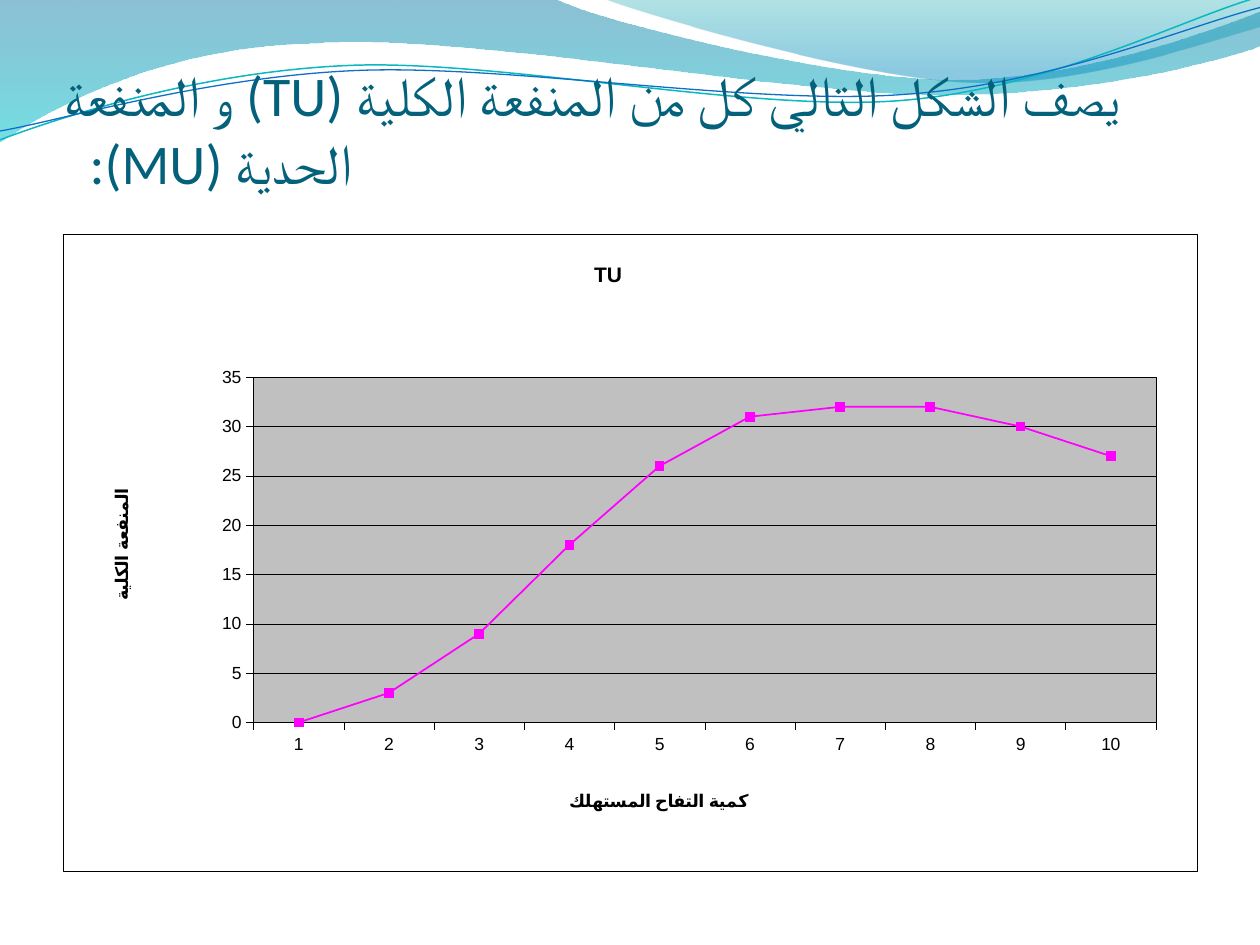
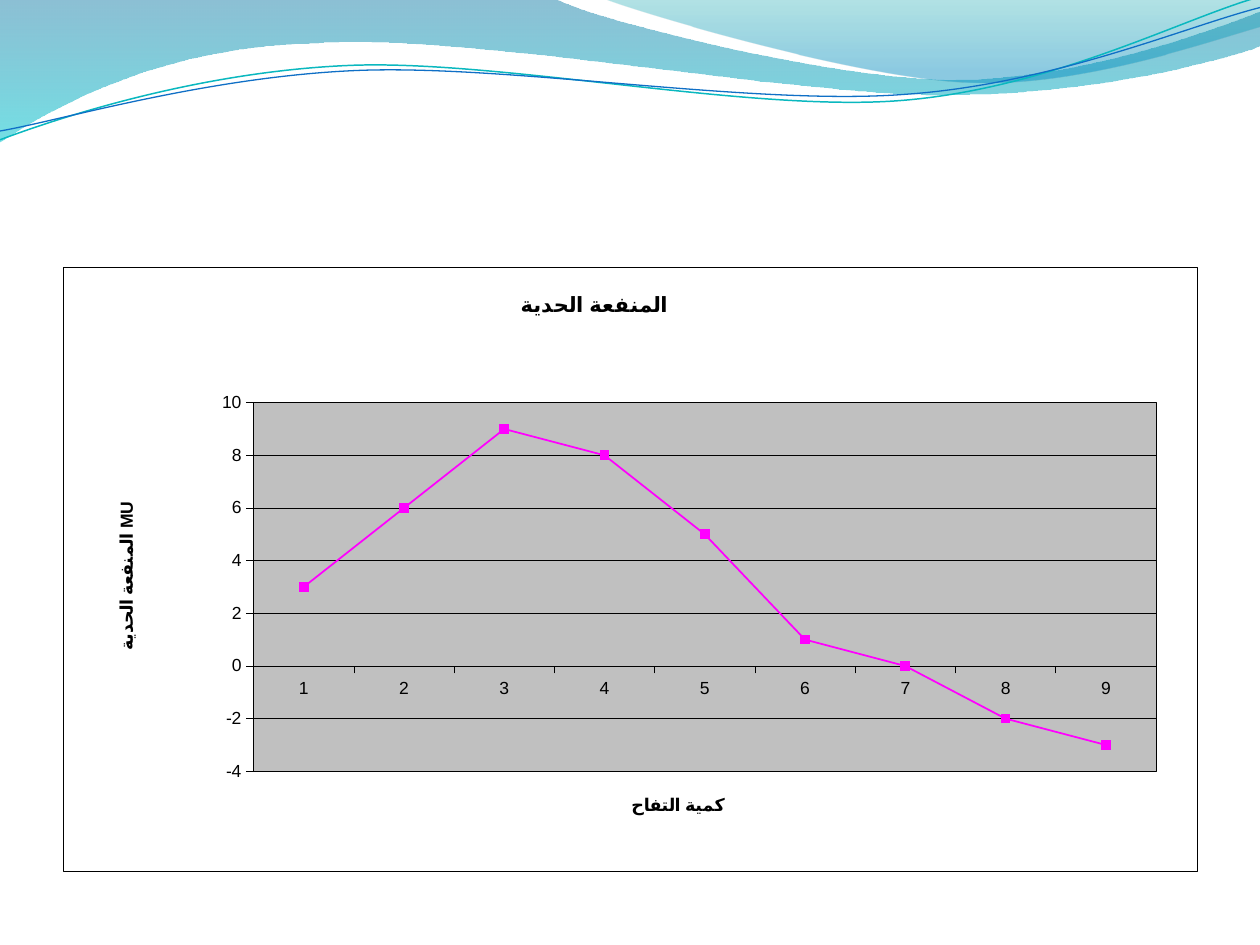
from lxml import etree
from pptx import Presentation
from pptx.chart.data import CategoryChartData
from pptx.dml.color import RGBColor
from pptx.enum.chart import XL_CHART_TYPE, XL_MARKER_STYLE, XL_TICK_MARK
from pptx.enum.text import MSO_ANCHOR, PP_ALIGN
from pptx.oxml import parse_xml
from pptx.oxml.ns import nsdecls, qn
from pptx.util import Inches, Pt

BLACK = RGBColor(0x00, 0x00, 0x00)
TITLE_TEAL = RGBColor(0x04, 0x61, 0x7B)
MAGENTA = RGBColor(0xFF, 0x00, 0xFF)
WHITE = RGBColor(0xFF, 0xFF, 0xFF)
PLOT_GREY = RGBColor(0xC0, 0xC0, 0xC0)
WAVE_BLUE = RGBColor(0x00, 0x74, 0xA1)
WAVE_AQUA = RGBColor(0x00, 0xC6, 0xCF)
CREST_TEAL = RGBColor(0x00, 0xA1, 0xA9)
CREST_BLUE = RGBColor(0x00, 0x8B, 0xBF)
LINE_AQUA = RGBColor(0x0A, 0xB8, 0xBF)
LINE_BLUE = RGBColor(0x0F, 0x6F, 0xC6)

TITLE_FONT = "Calibri"
CHART_FONT = "Arial"
CHART_LEFT, CHART_WIDTH, CHART_BOTTOM = 0.5, 9, 6.92
PLOT_LEFT, PLOT_TOP, PLOT_WIDTH = 0.168, 0.224, 0.796

WAVE = [
    (0, 0), (4.4, -0.01),
    (4.76, 0.17, 6.64, 0.63, 7.58, 0.63), (8.53, 0.63, 9.58, 0.26, 10, 0.09),
    (10.01, 0.36),
    (9.83, 0.44, 8.7, 0.76, 7.46, 0.75), (6.22, 0.75, 3.82, 0.28, 2.57, 0.34),
    (1.29, 0.36, 0.46, 0.83, -0.01, 1.13),
]
CREST = [
    (4.79, -0.01),
    (5.09, 0.11, 6.82, 0.62, 7.69, 0.65), (8.56, 0.69, 9.61, 0.32, 10, 0.21),
    (10, 0),
]
AQUA_CURVE = [
    (0, 1.11), (0.48, 0.93, 1.58, 0.57, 2.77, 0.52),
    (3.95, 0.47, 5.93, 0.89, 7.13, 0.8), (8.33, 0.71, 9.38, 0.15, 9.98, -0.02),
]
BLUE_CURVE = [
    (0, 1.04), (0.47, 0.96, 1.64, 0.61, 2.83, 0.56),
    (4.03, 0.51, 5.97, 0.84, 7.17, 0.75), (8.36, 0.67, 9.41, 0.21, 10, 0.06),
]


def bend_segments(shape, segments):
    lines = iter(list(shape._element.iter(qn("a:lnTo"))))
    for segment in segments:
        line = next(lines)
        if len(segment) == 6:
            line.tag = qn("a:cubicBezTo")
            for _ in range(2):
                control_line = next(lines)
                line.append(control_line[0])
                control_line.getparent().remove(control_line)


def add_outline(slide, outline, closed):
    points = [(Inches(segment[i]), Inches(segment[i + 1]))
              for segment in outline for i in range(0, len(segment), 2)]
    builder = slide.shapes.build_freeform(*points[0], scale=1.0)
    builder.add_line_segments(points[1:], close=closed)
    shape = builder.convert_to_shape()
    bend_segments(shape, outline[1:])
    shape.shadow.inherit = False
    return shape


def add_band(slide, outline, stops):
    shape = add_outline(slide, outline, True)
    shape.line.fill.background()
    shape.fill.gradient()
    shape.fill.gradient_angle = 270
    for gradient_stop, (position, color, _) in zip(shape.fill.gradient_stops, stops):
        gradient_stop.position = position
        gradient_stop.color.rgb = color
    colors = shape._element.spPr.iter(qn("a:srgbClr"))
    for color_element, (_, _, opacity) in zip(colors, stops):
        alpha = etree.SubElement(color_element, qn("a:alpha"))
        alpha.set("val", str(opacity * 1000))


def add_curve(slide, outline, color, width):
    shape = add_outline(slide, outline, False)
    shape.fill.background()
    shape.line.color.rgb = color
    shape.line.width = Pt(width)


def add_wave_header(slide):
    add_band(slide, WAVE, [(0, WAVE_BLUE, 45), (1, WAVE_AQUA, 55)])
    add_band(slide, CREST, [(0, CREST_TEAL, 30), (0.8, CREST_BLUE, 45)])
    add_curve(slide, AQUA_CURVE, LINE_AQUA, 0.85)
    add_curve(slide, BLUE_CURVE, LINE_BLUE, 0.75)


def add_title(slide, text):
    box = slide.shapes.add_textbox(Inches(0.51), Inches(0.92), Inches(9), Inches(0.63))
    frame = box.text_frame
    frame.word_wrap = True
    frame.vertical_anchor = MSO_ANCHOR.BOTTOM
    frame.margin_left = frame.margin_right = frame.margin_bottom = 0
    frame.margin_top = Inches(0.05)
    paragraph = frame.paragraphs[0]
    paragraph.alignment = PP_ALIGN.LEFT
    paragraph._p.get_or_add_pPr().set("rtl", "1")
    run = paragraph.add_run()
    run.text = text
    run.font.name = TITLE_FONT
    run.font.size = Pt(32)
    run.font.color.rgb = TITLE_TEAL
    complex_script = etree.SubElement(run._r.get_or_add_rPr(), qn("a:cs"))
    complex_script.set("typeface", TITLE_FONT)


def set_layout(element, inner=False, **fractions):
    for existing in element.findall(qn("c:layout")):
        element.remove(existing)
    layout = etree.Element(qn("c:layout"))
    manual = etree.SubElement(layout, qn("c:manualLayout"))
    settings = [("layoutTarget", "inner")] if inner else []
    settings += [("xMode", "edge"), ("yMode", "edge"), *fractions.items()]
    for name, value in settings:
        etree.SubElement(manual, qn(f"c:{name}")).set("val", str(value))
    text = element.find(qn("c:tx"))
    if text is None:
        element.insert(0, layout)
    else:
        text.addnext(layout)


def area_format(color):
    return parse_xml(
        f'<c:spPr {nsdecls("c", "a")}><a:solidFill><a:srgbClr val="{color}"/></a:solidFill>'
        f'<a:ln w="{Pt(0.25)}"><a:solidFill><a:srgbClr val="{BLACK}"/></a:solidFill></a:ln>'
        '</c:spPr>')


def set_chart_title(owner, title, size):
    text, x, y = title
    owner.has_title = True
    title_object = owner.chart_title if hasattr(owner, "chart_title") else owner.axis_title
    run = title_object.text_frame.paragraphs[0].add_run()
    run.text = text
    run.font.name = CHART_FONT
    run.font.size = Pt(size)
    run.font.bold = True
    run.font.color.rgb = BLACK
    set_layout(title_object._element, x=x, y=y)
    return title_object


def style_axis(axis):
    axis.major_tick_mark = XL_TICK_MARK.OUTSIDE
    axis.minor_tick_mark = XL_TICK_MARK.NONE
    axis.format.line.color.rgb = BLACK
    axis.format.line.width = Pt(0.25)


def style_series(series):
    series.smooth = False
    series.format.line.color.rgb = MAGENTA
    series.format.line.width = Pt(1)
    marker = series.marker
    marker.style = XL_MARKER_STYLE.SQUARE
    marker.size = 5
    marker.format.fill.solid()
    marker.format.fill.fore_color.rgb = MAGENTA
    marker.format.line.color.rgb = MAGENTA


def add_utility_chart(slide, top, values, scale, plot_height,
                      title, quantity_title, utility_title):
    data = CategoryChartData()
    data.categories = [str(number) for number in range(1, len(values) + 1)]
    data.add_series("Series 1", values)
    chart = slide.shapes.add_chart(
        XL_CHART_TYPE.LINE_MARKERS, Inches(CHART_LEFT), Inches(top),
        Inches(CHART_WIDTH), Inches(CHART_BOTTOM - top), data).chart
    chart.has_legend = False
    chart.font.name = CHART_FONT
    chart.font.size = Pt(10)
    chart.font.color.rgb = BLACK
    chart.plots[0].vary_by_categories = False
    style_series(chart.plots[0].series[0])

    quantity_axis, utility_axis = chart.category_axis, chart.value_axis
    for axis in (quantity_axis, utility_axis):
        style_axis(axis)
    utility_axis.minimum_scale, utility_axis.maximum_scale, utility_axis.major_unit = scale
    utility_axis.has_major_gridlines = True
    gridline = utility_axis.major_gridlines.format.line
    gridline.color.rgb = BLACK
    gridline.width = Pt(0.25)

    set_chart_title(chart, title, 12)
    set_chart_title(quantity_axis, quantity_title, 10)
    vertical_title = set_chart_title(utility_axis, utility_title, 10)
    body = vertical_title._element.find(".//" + qn("a:bodyPr"))
    body.set("rot", "-5400000")
    body.set("vert", "horz")

    chart_space = chart._chartSpace
    chart_space.find(qn("c:chart")).addnext(area_format(WHITE))
    plot_area = chart_space.find(".//" + qn("c:plotArea"))
    plot_area.append(area_format(PLOT_GREY))
    set_layout(plot_area, inner=True, x=PLOT_LEFT, y=PLOT_TOP, w=PLOT_WIDTH, h=plot_height)


def main():
    presentation = Presentation()
    presentation.slide_width = Inches(10)
    presentation.slide_height = Inches(7.5)
    total_slide, marginal_slide = [
        presentation.slides.add_slide(presentation.slide_layouts[6]) for _ in range(2)]
    for slide in (total_slide, marginal_slide):
        add_wave_header(slide)

    add_title(total_slide,
              "يصف الشكل التالي كل من المنفعة الكلية (TU) و المنفعة الحدية (MU):  ")
    add_utility_chart(
        total_slide, 1.86, [0, 3, 9, 18, 26, 31, 32, 32, 30, 27], (0, 35, 5), 0.542,
        title=("TU", 0.465, 0.037),
        quantity_title=("كمية التفاح المستهلك", 0.444, 0.871),
        utility_title=("المنفعة الكلية", 0.041, 0.394))
    add_utility_chart(
        marginal_slide, 2.12, [3, 6, 9, 8, 5, 1, 0, -2, -3], (-4, 10, 2), 0.61,
        title=("المنفعة الحدية", 0.4, 0.036),
        quantity_title=("كمية التفاح ", 0.499, 0.87),
        utility_title=("المنفعة الحدية MU", 0.043, 0.383))
    presentation.save("out.pptx")


if __name__ == "__main__":
    main()
